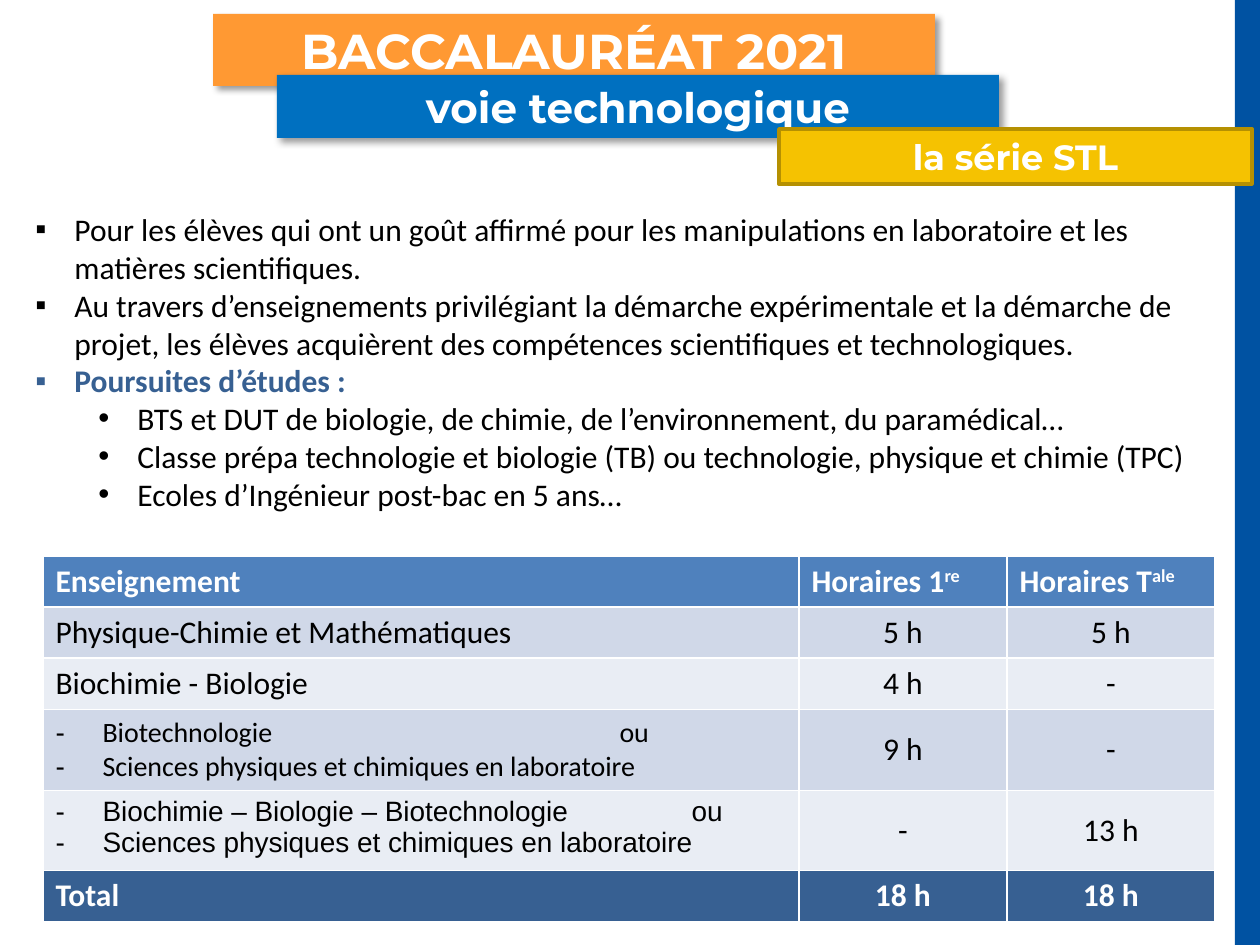
import pptx
import pptx.util
import pptx.dml.color
import pptx.enum.shapes
import pptx.enum.text
import pptx.oxml
import pptx.oxml.ns

PX = 7257
CENTER = pptx.enum.text.PP_ALIGN.CENTER
MIDDLE = pptx.enum.text.MSO_ANCHOR.MIDDLE
RECTANGLE = pptx.enum.shapes.MSO_SHAPE.RECTANGLE
color = pptx.dml.color.RGBColor.from_string


def write(paragraph, text, size=18, font="Calibri", fill="000000", bold=False, align=None, baseline=0):
    run = paragraph.add_run()
    run.text = text
    run.font.size = pptx.util.Pt(size)
    run.font.name = font
    run.font.bold = bold
    run.font.color.rgb = color(fill)
    if baseline:
        run.font._element.set("baseline", str(baseline * 1000))
    if align is not None:
        paragraph.alignment = align


def add_bullet(paragraph, character, margin, hanging, tab=None):
    properties = paragraph._p.get_or_add_pPr()
    properties.set("marL", str(margin * PX))
    properties.set("indent", str(-hanging * PX))
    namespace = pptx.oxml.ns.nsdecls("a")
    properties.append(pptx.oxml.parse_xml(f'<a:buFont {namespace} typeface="Arial"/>'))
    properties.append(pptx.oxml.parse_xml(f'<a:buChar {namespace} char="{character}"/>'))
    if tab:
        properties.append(pptx.oxml.parse_xml(
            f'<a:tabLst {namespace}><a:tab pos="{tab * PX}" algn="l"/></a:tabLst>'))


presentation = pptx.Presentation()
presentation.slide_width = 1260 * PX
presentation.slide_height = 945 * PX
slide = presentation.slides.add_slide(presentation.slide_layouts[5])

side_bar = slide.shapes.add_shape(RECTANGLE, 1235 * PX, 0, 25 * PX, 945 * PX)
side_bar.shadow.inherit = False
side_bar.fill.solid()
side_bar.fill.fore_color.rgb = color("0052A2")
side_bar.line.fill.background()

banners = [
    ("BACCALAURÉAT 2021", 28, "FF9933", (213, 14, 722, 72), None),
    ("voie technologique", 24, "0070C0", (277, 75, 722, 63), None),
    ("la série STL", 20, "F5C201", (779, 129, 473, 55), "B59001"),
]
for text, size, fill, (left, top, width, height), outline in banners:
    if size == 28:
        banner = slide.shapes.title
        banner.left, banner.top = left * PX, top * PX
        banner.width, banner.height = width * PX, height * PX
    else:
        banner = slide.shapes.add_shape(RECTANGLE, left * PX, top * PX, width * PX, height * PX)
    banner.fill.solid()
    banner.fill.fore_color.rgb = color(fill)
    banner.shadow.inherit = False
    if outline:
        banner.line.color.rgb = color(outline)
        banner.line.width = pptx.util.Pt(2)
    else:
        banner.line.fill.background()
        effects = banner._element.spPr.find(pptx.oxml.ns.qn("a:effectLst"))
        effects.append(pptx.oxml.parse_xml(
            f'<a:outerShdw {pptx.oxml.ns.nsdecls("a")} blurRad="50800" dist="38100" dir="2700000" '
            'algn="tl" rotWithShape="0"><a:srgbClr val="000000"><a:alpha val="40000"/></a:srgbClr></a:outerShdw>'))
    frame = banner.text_frame
    frame.auto_size = pptx.enum.text.MSO_AUTO_SIZE.NONE
    frame.word_wrap = True
    frame.vertical_anchor = MIDDLE
    write(frame.paragraphs[0], text, size=size, font="Montserrat", fill="FFFFFF", bold=True, align=CENTER)

columns = [756, 208, 208]
rows = [50, 51, 51, 80, 80, 50]
table = slide.shapes.add_table(
    len(rows), len(columns), 43 * PX, 556 * PX, sum(columns) * PX, sum(rows) * PX).table
for column, width in zip(table.columns, columns):
    column.width = width * PX
for row, height in zip(table.rows, rows):
    row.height = height * PX

row_fills = ["4F81BD", "D0D8E8", "E9EDF4", "D0D8E8", "E9EDF4", "376092"]
for row, fill in zip(table.rows, row_fills):
    for cell in row.cells:
        cell.fill.solid()
        cell.fill.fore_color.rgb = color(fill)

headers = [("Enseignement", ""), ("Horaires 1", "re"), ("Horaires T", "ale")]
for cell, (text, superscript) in zip(table.rows[0].cells, headers):
    paragraph = cell.text_frame.paragraphs[0]
    write(paragraph, text, fill="FFFFFF", bold=True)
    if superscript:
        write(paragraph, superscript, fill="FFFFFF", bold=True, baseline=30)

subjects = [(1, "Physique-Chimie et Mathématiques"), (2, "Biochimie - Biologie"), (5, "Total")]
for index, text in subjects:
    total = index == 5
    write(table.cell(index, 0).text_frame.paragraphs[0], text,
          fill="FFFFFF" if total else "000000", bold=total)

options = [
    (3, "Biotechnologie", "Calibri", 564),
    (4, "Biochimie – Biologie – Biotechnologie", "Arial", 636),
]
for index, text, font, tab in options:
    frame = table.cell(index, 0).text_frame
    first, second = frame.paragraphs[0], frame.add_paragraph()
    add_bullet(first, "-", 47, 47, tab)
    add_bullet(second, "-", 47, 47)
    write(first, text + "\tou", size=16, font=font)
    write(second, "Sciences physiques et chimiques en laboratoire", size=16, font=font)

hours = [("5 h", "5 h"), ("4 h", "-"), ("9 h", "-"), ("-", "13 h"), ("18 h", "18 h")]
for index, values in enumerate(hours, 1):
    total = index == 5
    for column, text in enumerate(values, 1):
        cell = table.cell(index, column)
        cell.vertical_anchor = MIDDLE
        write(cell.text_frame.paragraphs[0], text, fill="FFFFFF" if total else "000000",
              bold=total, align=CENTER)

description = slide.shapes.add_textbox(23 * PX, 204 * PX, 1208 * PX, 318 * PX).text_frame
description.word_wrap = True
points = [
    (0, "Pour les élèves qui ont un goût affirmé pour les manipulations en laboratoire et les matières scientifiques."),
    (0, "Au travers d’enseignements privilégiant la démarche expérimentale et la démarche de projet, "
        "les élèves acquièrent des compétences scientifiques et technologiques."),
    (0, "Poursuites d’études :"),
    (1, "BTS et DUT de biologie, de chimie, de l’environnement, du paramédical…"),
    (1, "Classe prépa technologie et biologie (TB) ou technologie, physique et chimie (TPC)"),
    (1, "Ecoles d’Ingénieur post-bac en 5 ans…"),
]
for index, (level, text) in enumerate(points):
    paragraph = description.add_paragraph() if index else description.paragraphs[0]
    paragraph.level = level
    add_bullet(paragraph, "▪•"[level], 39 + 63 * level, 39)
    heading = text.startswith("Poursuites")
    write(paragraph, text, fill="376092" if heading else "000000", bold=heading)

presentation.save("out.pptx")
